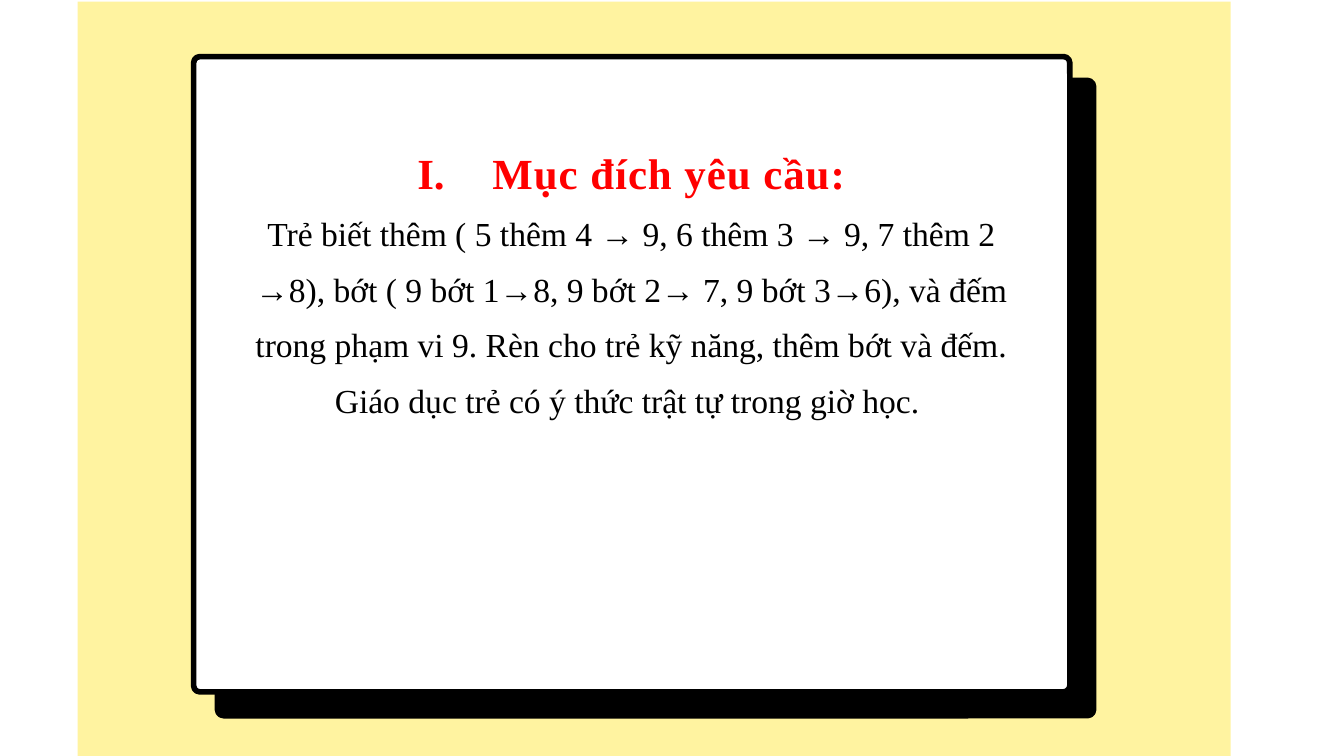
"""Build the lesson-goals slide: a framed card on a yellow panel."""
from lxml.etree import SubElement
from pptx import Presentation
from pptx.dml.color import RGBColor
from pptx.enum.shapes import MSO_SHAPE
from pptx.enum.text import MSO_ANCHOR, MSO_AUTO_SIZE, PP_ALIGN
from pptx.oxml.ns import qn
from pptx.util import Cm, Pt


def color(code):
    return RGBColor.from_string(code)


def write(holder, text, top, height, size, ink, bold=False, number=None, indent=0, track=0):
    holder.left, holder.top, holder.width, holder.height = Cm(4.57), Cm(top), Cm(14.73), Cm(height)
    frame = holder.text_frame
    frame.margin_left = frame.margin_top = frame.margin_right = frame.margin_bottom = 0
    frame.vertical_anchor = MSO_ANCHOR.TOP
    frame.auto_size = MSO_AUTO_SIZE.NONE
    frame.word_wrap = True
    line = frame.paragraphs[0]
    line.alignment = PP_ALIGN.CENTER
    line.line_spacing = Pt(29.8)
    line.space_before = Pt(0)
    props = line._p.get_or_add_pPr()
    props.set("marL", str(Cm(indent)))
    props.set("indent", str(-Cm(indent)))
    if number:
        SubElement(props, qn("a:buFont"), typeface="+mj-lt")
        SubElement(props, qn("a:buAutoNum"), type=number)
    else:
        SubElement(props, qn("a:buNone"))
    run = line.add_run()
    run.text = text
    run.font.name = "Times New Roman"
    run.font.size = Pt(size)
    run.font.bold = bold
    run.font.color.rgb = color(ink)
    run.font._element.set("spc", str(track))
    slide.shapes._spTree.append(holder._element)


deck = Presentation()
deck.slide_width, deck.slide_height = Cm(25.4), Cm(14.29)
slide = deck.slides.add_slide(deck.slide_layouts[1])

panel = slide.shapes.add_shape(MSO_SHAPE.RECTANGLE, Cm(1.47), Cm(0.03), Cm(21.79), Cm(14.27))
panel.shadow.inherit = False
panel.fill.solid()
panel.fill.fore_color.rgb = color("FFF3A0")
panel.line.fill.background()

for shift, fill in [(0.45, "000000"), (0, "FFFFFF")]:
    card = slide.shapes.add_shape(
        MSO_SHAPE.ROUNDED_RECTANGLE, Cm(3.66 + shift), Cm(1.07 + shift), Cm(16.56), Cm(12.01))
    card.adjustments[0] = 0.01
    card.shadow.inherit = False
    card.fill.solid()
    card.fill.fore_color.rgb = color(fill)
    card.line.color.rgb = color("000000")
    card.line.width = Pt(3)

write(slide.shapes.title, "Mục đích yêu cầu:", 2.69, 1.05, 23, "FF0000",
      bold=True, number="romanUcPeriod", indent=1.42, track=50)
write(slide.placeholders[1],
      "Trẻ biết thêm ( 5 thêm 4 → 9, 6 thêm 3 → 9, 7 thêm 2 →8), "
      "bớt ( 9 bớt 1→8, 9 bớt 2→ 7, 9 bớt 3→6), và đếm trong phạm vi 9. "
      "Rèn cho trẻ kỹ năng, thêm bớt và đếm. "
      "Giáo dục trẻ có ý thức trật tự trong giờ học. ",
      3.74, 5.25, 18, "000000")

deck.save("out.pptx")
